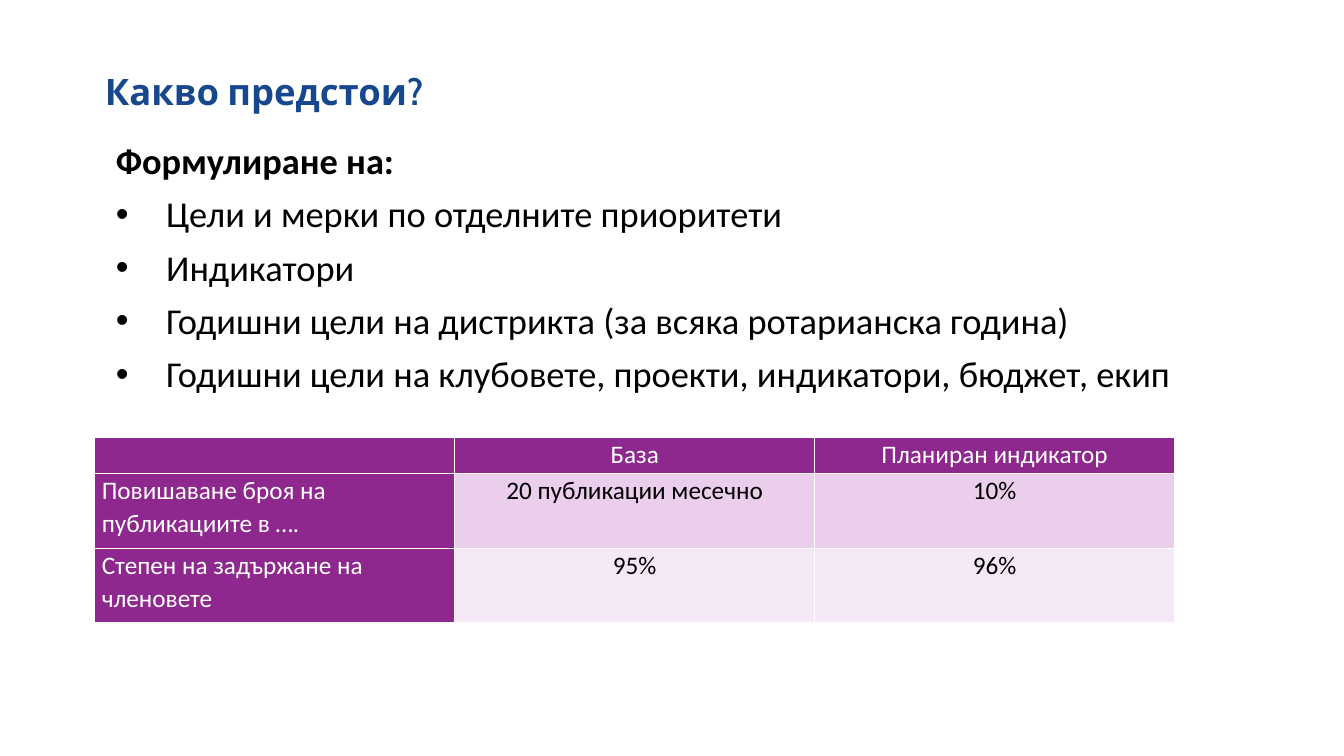
from lxml import etree
from pptx import Presentation
from pptx.dml.color import RGBColor
from pptx.enum import text
from pptx.oxml import ns
from pptx.util import Inches, Pt

BLUE = RGBColor(0x17, 0x47, 0x8F)
BLACK = RGBColor(0, 0, 0)
WHITE = RGBColor(255, 255, 255)
PURPLE = RGBColor(0x8E, 0x28, 0x8E)
BANDS = [RGBColor(0xEB, 0xCD, 0xEC), RGBColor(0xF5, 0xE8, 0xF6)]

GOALS = [
    "Цели и мерки по отделните приоритети",
    "Индикатори",
    "Годишни цели на дистрикта (за всяка ротарианска година)",
    "Годишни цели на клубовете, проекти, индикатори, бюджет, екип",
]
ROWS = [
    ["", "База", "Планиран индикатор"],
    ["Повишаване броя на публикациите в ….", "20 публикации месечно", "10%"],
    ["Степен на задържане на членовете", "95%", "96%"],
]


def style(para, name, size, color, bold=False):
    """Set the font of a whole paragraph."""
    font = para.font
    font.name, font.size, font.bold = name, Pt(size), bold
    font.color.rgb = color


def place(shape, box):
    """Move a shape to a box given in inches."""
    shape.left, shape.top, shape.width, shape.height = map(Inches, box)


def add_title(slide, box):
    """Fill the title placeholder."""
    title = slide.shapes.title
    place(title, box)
    frame = title.text_frame
    frame.text = "Какво предстои?"
    frame.auto_size = text.MSO_AUTO_SIZE.NONE
    frame.vertical_anchor = text.MSO_ANCHOR.MIDDLE
    para = frame.paragraphs[0]
    para.alignment = text.PP_ALIGN.LEFT
    para.line_spacing = 0.9
    style(para, "Cabin", 26, BLUE, True)


def add_bullet(para):
    """Give a paragraph a hanging round bullet."""
    props = para._p.get_or_add_pPr()
    props.set("marL", str(Inches(0.5)))
    props.set("indent", str(Inches(-0.5)))
    etree.SubElement(props, ns.qn("a:buFont"), typeface="Arial")
    etree.SubElement(props, ns.qn("a:buChar"), char="•")


def add_goals(slide, box):
    """Write the heading and the bulleted goals."""
    frame = slide.shapes.add_textbox(*map(Inches, box)).text_frame
    frame.word_wrap = True
    head = frame.paragraphs[0]
    head.text = "Формулиране на:"
    head.line_spacing = 0.9
    style(head, "Calibri", 26, BLACK, True)
    for goal in GOALS:
        para = frame.add_paragraph()
        para.text = goal
        add_bullet(para)
        para.line_spacing = 0.9
        para.space_before = Pt(10)
        style(para, "Calibri", 26, BLACK)


def add_edges(cell):
    """Draw thin white lines round a cell."""
    props = cell._tc.get_or_add_tcPr()
    for side in "LRTB":
        line = etree.SubElement(props, ns.qn(f"a:ln{side}"), w=str(Pt(1)))
        fill = etree.SubElement(line, ns.qn("a:solidFill"))
        etree.SubElement(fill, ns.qn("a:srgbClr"), val=str(WHITE))


def fill_cell(cell, words, row, col):
    """Write and colour one cell by its place in the table."""
    head = row == 0 or col == 0
    add_edges(cell)
    cell.fill.solid()
    cell.fill.fore_color.rgb = PURPLE if head else BANDS[row - 1]
    cell.margin_left = cell.margin_right = Inches(0.07)
    cell.margin_top = cell.margin_bottom = 0
    cell.text = words
    para = cell.text_frame.paragraphs[0]
    para.alignment = text.PP_ALIGN.CENTER if col else text.PP_ALIGN.LEFT
    para.line_spacing = 1.07
    para.space_after = Pt(8)
    style(para, "Calibri", 18, WHITE if head else BLACK)


def add_grid(slide, box):
    """Build the table of indicators."""
    shape = slide.shapes.add_table(len(ROWS), len(ROWS[0]), *map(Inches, box))
    table = shape.table
    table.first_row = table.horz_banding = False
    for row, words in enumerate(ROWS):
        table.rows[row].height = Inches(0.74 if row else 0.36)
        for col, word in enumerate(words):
            fill_cell(table.cell(row, col), word, row, col)


def main():
    """Build and save the slide."""
    deck = Presentation()
    deck.slide_width, deck.slide_height = Inches(13.33), Inches(7.5)
    slide = deck.slides.add_slide(deck.slide_layouts[5])
    add_title(slide, (0.94, 0.66, 6.92, 0.54))
    add_goals(slide, (1.05, 1.37, 10.71, 2.79))
    add_grid(slide, (0.94, 4.34, 10.71, 1.84))
    deck.save("out.pptx")


if __name__ == "__main__":
    main()
